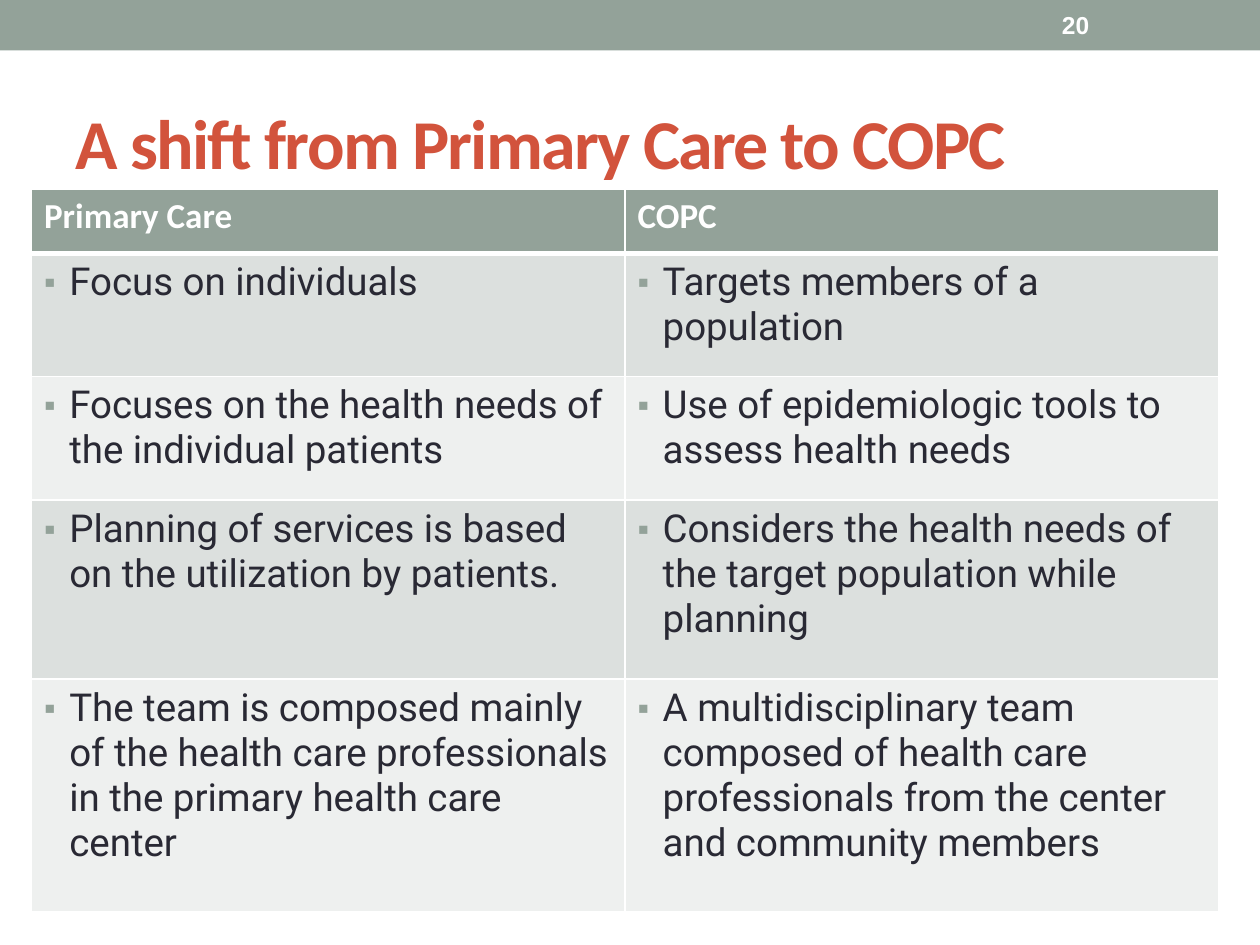
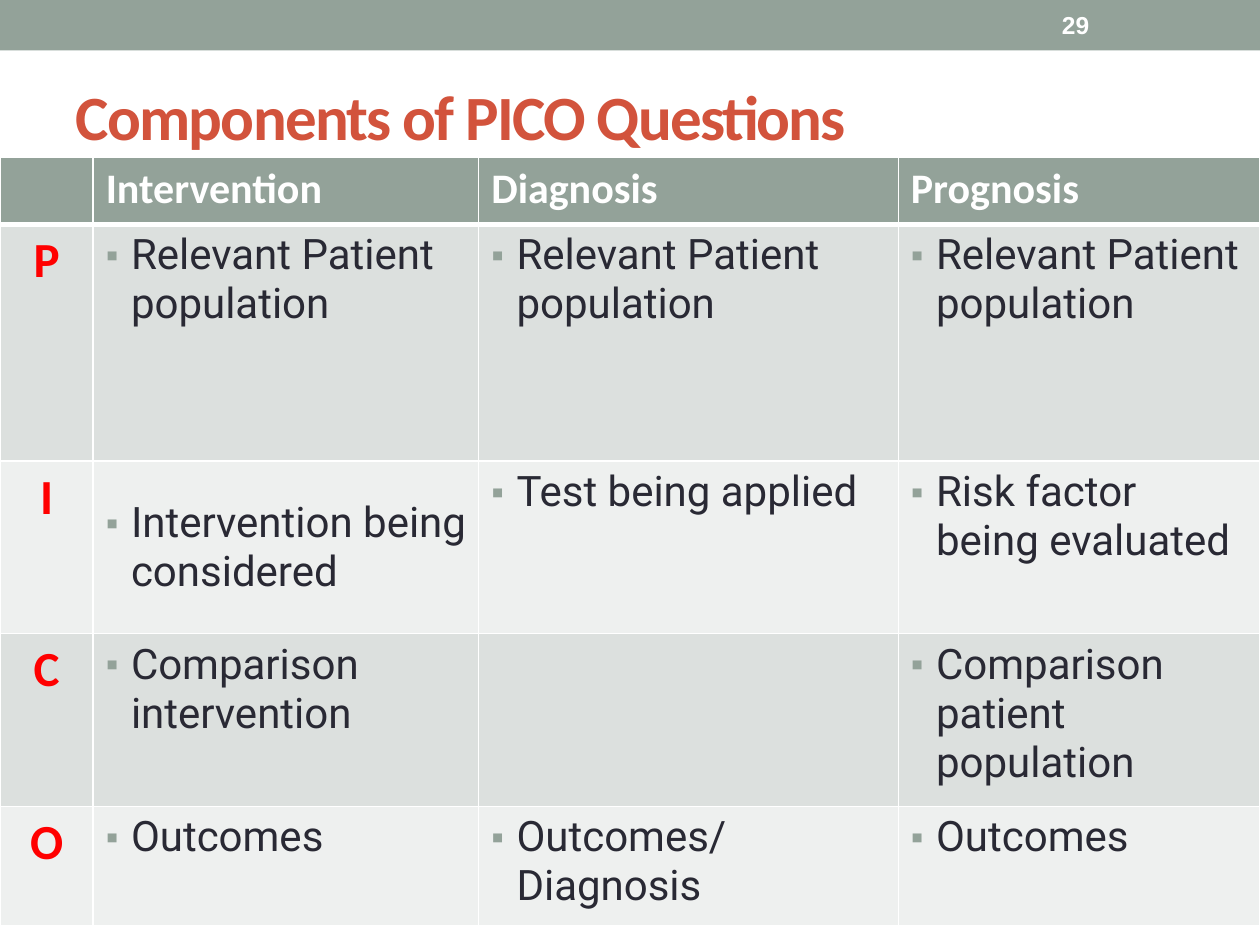
from lxml import etree
from pptx import Presentation
from pptx import util as u
from pptx.dml.color import RGBColor
from pptx.enum import shapes, text
from pptx.oxml import ns

COLORS = {
    "sage": "93A299", "title": "D2533C", "white": "FFFFFF", "body": "292934",
    "letter": "FF0000", "odd_row": "DCE0DE", "even_row": "EEF0EF",
}

# Content of the two comparison slides; "key_column" marks the PICO letters
comparisons = [
    {
        "title": "A shift from Primary Care to COPC", "number": "20",
        "title_box": (0.5, 0.58, 9, 1.08), "title_size": 40,
        "table_box": (0.25, 1.5, 9.42, 5.75),
        "columns": [4.71, 4.71], "row_heights": [0.51, 0.98, 0.98, 1.42, 1.85],
        "header_size": 20, "body_size": 22, "key_column": False, "middle_cells": [],
        "rows": [
            ["Primary Care", "COPC"],
            ["Focus on individuals", "Targets members of a population"],
            ["Focuses on the health needs of the individual patients",
             "Use of epidemiologic tools to assess health needs"],
            ["Planning of services is based on the utilization by patients.",
             "Considers the health needs of the target population while planning"],
            ["The team is composed mainly of the health care professionals "
             "in the primary health care center",
             "A multidisciplinary team composed of health care professionals "
             "from the center and community members"],
        ],
    },
    {
        "title": "Components of PICO Questions", "number": "29",
        "title_box": (0.5, 0.58, 7.17, 0.67), "title_size": 36,
        "table_box": (0, 1.25, 10, 6.11),
        "columns": [0.74, 3.06, 3.33, 2.87], "row_heights": [0.53, 1.88, 1.37, 1.37, 0.95],
        "header_size": 24, "body_size": 24, "key_column": True, "middle_cells": [(2, 1)],
        "rows": [
            ["", "Intervention", "Diagnosis", "Prognosis"],
            ["P"] + ["Relevant Patient population"] * 3,
            ["I", "Intervention being considered", "Test being applied",
             "Risk factor being evaluated"],
            ["C", "Comparison intervention", "", "Comparison patient population"],
            ["O", "Outcomes", "Outcomes/Diagnosis", "Outcomes"],
        ],
    },
]


def set_font(font, name, size, color, bold=True):
    font.name, font.size, font.bold = name, u.Pt(size), bold
    font.color.rgb = RGBColor.from_string(COLORS[color])


def add_xml(parent, index, xml):
    root = etree.fromstring(f'<a:x {ns.nsdecls("a")}>{xml}</a:x>')
    for offset, element in enumerate(list(root)):
        parent.insert(index + offset, element)


prs = Presentation()
prs.slide_width, prs.slide_height = u.Inches(10), u.Inches(7.5)

for comparison in comparisons:
    slide = prs.slides.add_slide(prs.slide_layouts[5])

    # Top band
    band = slide.shapes.add_shape(shapes.MSO_SHAPE.RECTANGLE, 0, 0, prs.slide_width, u.Inches(0.4))
    band.shadow.inherit = False
    band.fill.solid()
    band.fill.fore_color.rgb = RGBColor.from_string(COLORS["sage"])
    band.line.fill.background()

    # Title
    title = slide.shapes.title
    title.left, title.top, title.width, title.height = map(u.Inches, comparison["title_box"])
    title.text_frame.text = comparison["title"]
    title.text_frame.auto_size = text.MSO_AUTO_SIZE.NONE
    title.text_frame.vertical_anchor = text.MSO_ANCHOR.MIDDLE
    heading = title.text_frame.paragraphs[0]
    heading.alignment = text.PP_ALIGN.LEFT
    set_font(heading.font, "Calibri", comparison["title_size"], "title")
    heading.runs[0]._r.get_or_add_rPr().set("spc", "-100")

    # Comparison table
    rows, columns = comparison["rows"], comparison["columns"]
    table = slide.shapes.add_table(
        len(rows), len(columns), *map(u.Inches, comparison["table_box"])).table
    table.horz_banding = False
    for column, width in zip(table.columns, columns):
        column.width = u.Inches(width)
    for row, height in zip(table.rows, comparison["row_heights"]):
        row.height = u.Inches(height)

    for r, row_texts in enumerate(rows):
        for c, cell_text in enumerate(row_texts):
            cell = table.cell(r, c)
            cell.fill.solid()
            row_color = "sage" if r == 0 else "odd_row" if r % 2 else "even_row"
            cell.fill.fore_color.rgb = RGBColor.from_string(COLORS[row_color])
            if (r, c) in comparison["middle_cells"]:
                cell.vertical_anchor = text.MSO_ANCHOR.MIDDLE

            # White borders, with a thicker rule below the header
            thick_side = {0: "B", 1: "T"}.get(r)
            add_xml(cell._tc.get_or_add_tcPr(), 0, "".join(
                f'<a:ln{side} w="{int(u.Pt(3 if side == thick_side else 1))}"><a:solidFill>'
                f'<a:srgbClr val="{COLORS["white"]}"/></a:solidFill></a:ln{side}>'
                for side in "LRTB"))

            if not cell_text:
                continue
            cell.text = cell_text
            entry = cell.text_frame.paragraphs[0]
            if r == 0:
                set_font(entry.font, "Calibri", comparison["header_size"], "white")
            elif c == 0 and comparison["key_column"]:
                entry.alignment = text.PP_ALIGN.CENTER
                set_font(entry.font, "Calibri", 28, "letter")
            else:
                set_font(entry.font, "Roboto", comparison["body_size"], "body", False)
                # Hanging square bullet
                properties = entry._p.get_or_add_pPr()
                properties.set("marL", str(int(u.Inches(0.2))))
                properties.set("indent", str(int(u.Inches(-0.2))))
                add_xml(properties, 0,
                        '<a:spcBef><a:spcPct val="20000"/></a:spcBef>'
                        f'<a:buClr><a:srgbClr val="{COLORS["sage"]}"/></a:buClr>'
                        '<a:buSzPct val="85000"/><a:buFont typeface="Arial"/>'
                        '<a:buChar char="▪"/>')

    # Slide number
    number = slide.shapes.add_textbox(*map(u.Inches, (8.33, 0.02, 1.17, 0.36))).text_frame
    number.word_wrap = True
    number.vertical_anchor = text.MSO_ANCHOR.MIDDLE
    number.text = comparison["number"]
    set_font(number.paragraphs[0].font, "Arial", 14, "white")

prs.save("out.pptx")
